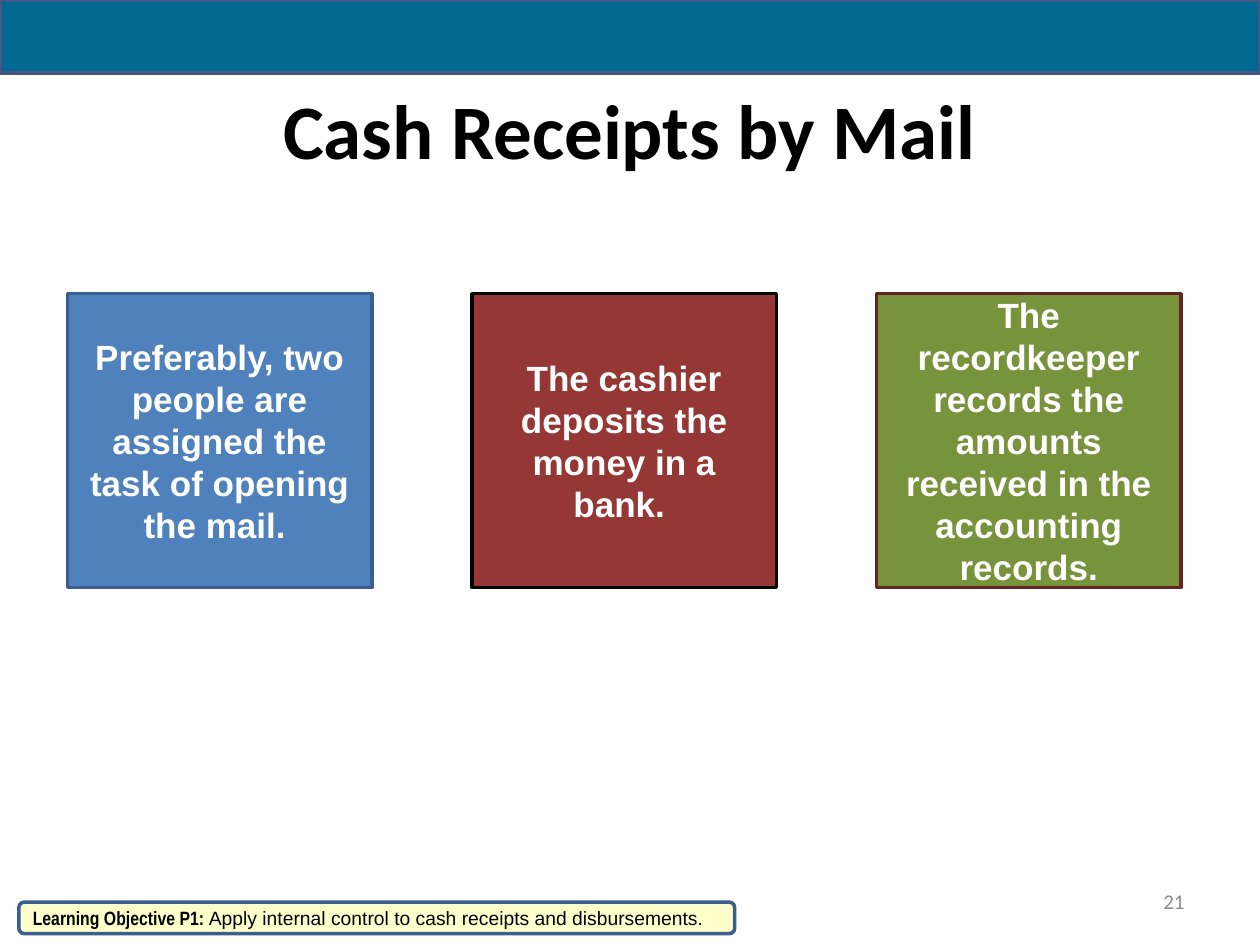
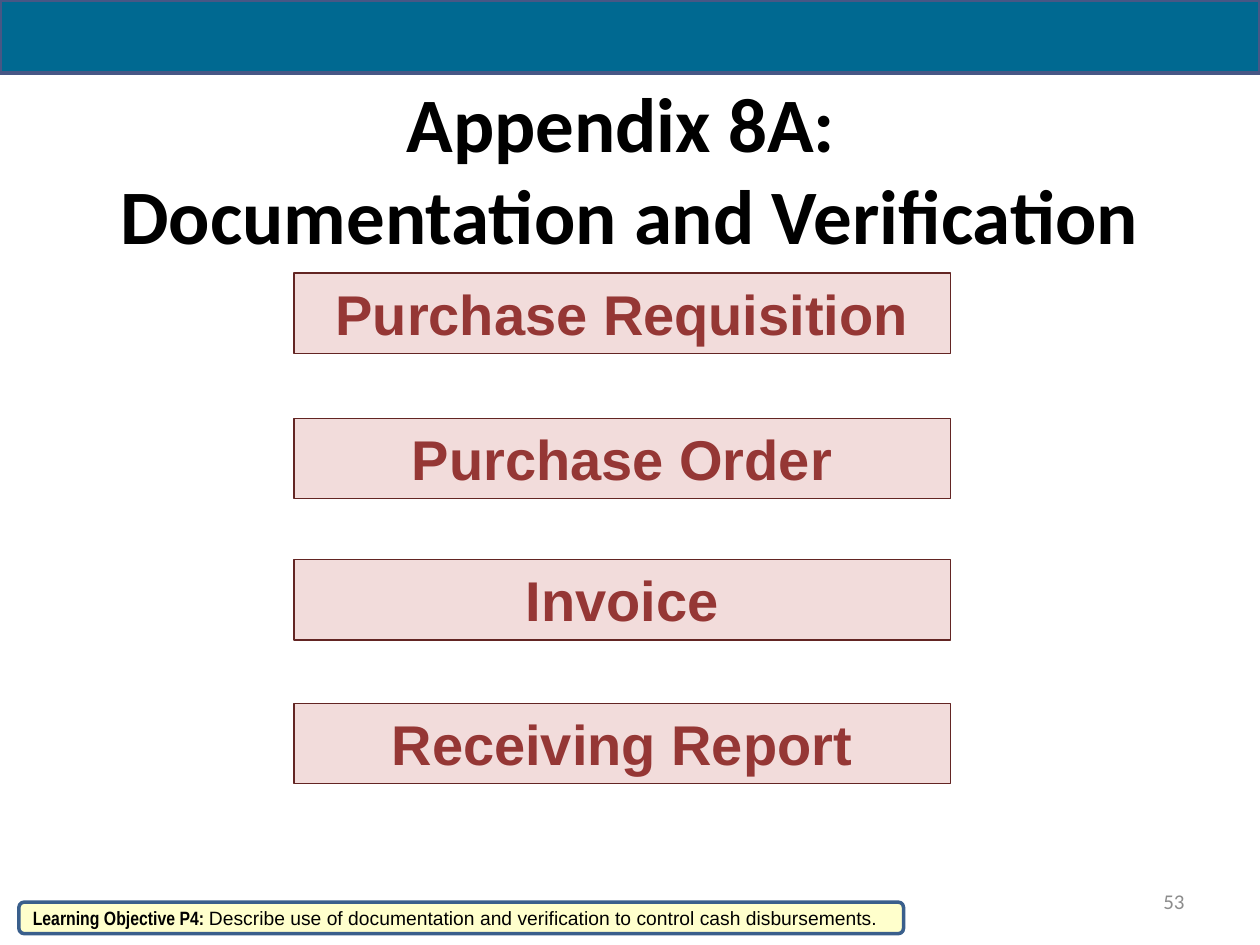
from pptx import Presentation
from pptx.dml.color import RGBColor
from pptx.enum.shapes import MSO_SHAPE
from pptx.enum.text import MSO_ANCHOR, MSO_AUTO_SIZE, PP_ALIGN
from pptx.util import Pt

BLACK = RGBColor(0x00, 0x00, 0x00)
WHITE = RGBColor(0xFF, 0xFF, 0xFF)
GRAY = RGBColor(0x8C, 0x8C, 0x8C)
TEAL = RGBColor(0x00, 0x69, 0x91)
INDIGO = RGBColor(0x47, 0x57, 0x85)
BLUE = RGBColor(0x4F, 0x81, 0xBD)
DARK_BLUE = RGBColor(0x3A, 0x5F, 0x8C)
RED = RGBColor(0x95, 0x37, 0x35)
DARK_RED = RGBColor(0x63, 0x25, 0x23)
PINK = RGBColor(0xF2, 0xDC, 0xDB)
GREEN = RGBColor(0x77, 0x93, 0x3C)
CREAM = RGBColor(0xFF, 0xFF, 0xCC)

prs = Presentation()
prs.slide_width, prs.slide_height = Pt(720), Pt(540)
TITLE_ONLY = prs.slide_layouts[5]


def add_box(slide, place, fill, line, weight, kind=MSO_SHAPE.RECTANGLE):
    """Add a filled, outlined shape without shadow; place is left, top, width, height."""
    box = slide.shapes.add_shape(kind, *map(Pt, place))
    box.shadow.inherit = False
    box.fill.solid()
    box.fill.fore_color.rgb = fill
    box.line.color.rgb = line
    box.line.width = Pt(weight)
    box.text_frame.word_wrap = True
    return box


def style(paragraph, font_name, size, color, bold, align):
    paragraph.alignment = align
    for run in paragraph.runs:
        run.font.name = font_name
        run.font.size = Pt(size)
        run.font.bold = bold
        run.font.color.rgb = color


# Shared frame: title, top band, page number and learning objective
pages = [
    ("Cash Receipts by Mail", 36, 75.6, "21", 409, "Learning Objective P1: ",
     "Apply internal control to cash receipts and disbursements."),
    ("Appendix 8A: \vDocumentation and Verification", 48, 96, "53", 505.5,
     "Learning Objective P4: ",
     "Describe use of documentation and verification to control cash disbursements."),
]
for heading, top, height, number, objective_width, label, goal in pages:
    slide = prs.slides.add_slide(TITLE_ONLY)
    title = slide.shapes.title
    title.left, title.top, title.width, title.height = map(Pt, (36, top, 648, height))
    title.text_frame.text = heading
    title.text_frame.auto_size = MSO_AUTO_SIZE.NONE
    title.text_frame.vertical_anchor = MSO_ANCHOR.MIDDLE
    style(title.text_frame.paragraphs[0], "Calibri", 44, BLACK, True, PP_ALIGN.CENTER)

    add_box(slide, (0, 0, 720, 42), TEAL, INDIGO, 2.25)

    page_number = slide.shapes.add_textbox(Pt(516), Pt(500.5), Pt(168), Pt(28.8)).text_frame
    page_number.word_wrap = True
    page_number.vertical_anchor = MSO_ANCHOR.MIDDLE
    page_number.text = number
    style(page_number.paragraphs[0], "Calibri", 12, GRAY, False, PP_ALIGN.RIGHT)

    objective = add_box(slide, (10.8, 515.5, objective_width, 18), CREAM, DARK_BLUE, 2,
                        MSO_SHAPE.ROUNDED_RECTANGLE).text_frame
    objective.margin_top = objective.margin_bottom = 0
    objective.text = label
    sentence = objective.paragraphs[0]
    sentence.add_run().text = goal
    style(sentence, "Arial", 11, BLACK, False, PP_ALIGN.LEFT)
    sentence.runs[0].font.name = "Arial Narrow"
    sentence.runs[0].font.bold = True

mail_slide, documents_slide = prs.slides

# Cash receipts by mail: three duties side by side
duties = [
    ("Preferably, two people are assigned the task of opening the mail. ", BLUE, DARK_BLUE),
    ("The cashier deposits the money in a bank. ", RED, BLACK),
    ("The recordkeeper records the amounts received in the accounting records.",
     GREEN, DARK_RED),
]
for column, (duty, fill, line) in enumerate(duties):
    card = add_box(mail_slide, (38.5 + 231.2 * column, 167.8, 174, 168), fill, line, 2)
    card.text_frame.text = duty
    style(card.text_frame.paragraphs[0], "Arial", 20, WHITE, True, PP_ALIGN.CENTER)

# Appendix 8A: the documents from top to bottom
documents = [
    ("Purchase Requisition", 156),
    ("Purchase Order", 239),
    ("Invoice", 319.7),
    ("Receiving Report", 401.8),
]
for document, top in documents:
    bar = add_box(documents_slide, (168, top, 375, 46), PINK, DARK_RED, 0.75)
    bar.text_frame.vertical_anchor = MSO_ANCHOR.TOP
    bar.text_frame.text = document
    style(bar.text_frame.paragraphs[0], "Arial", 32, RED, True, PP_ALIGN.CENTER)

prs.save("out.pptx")
